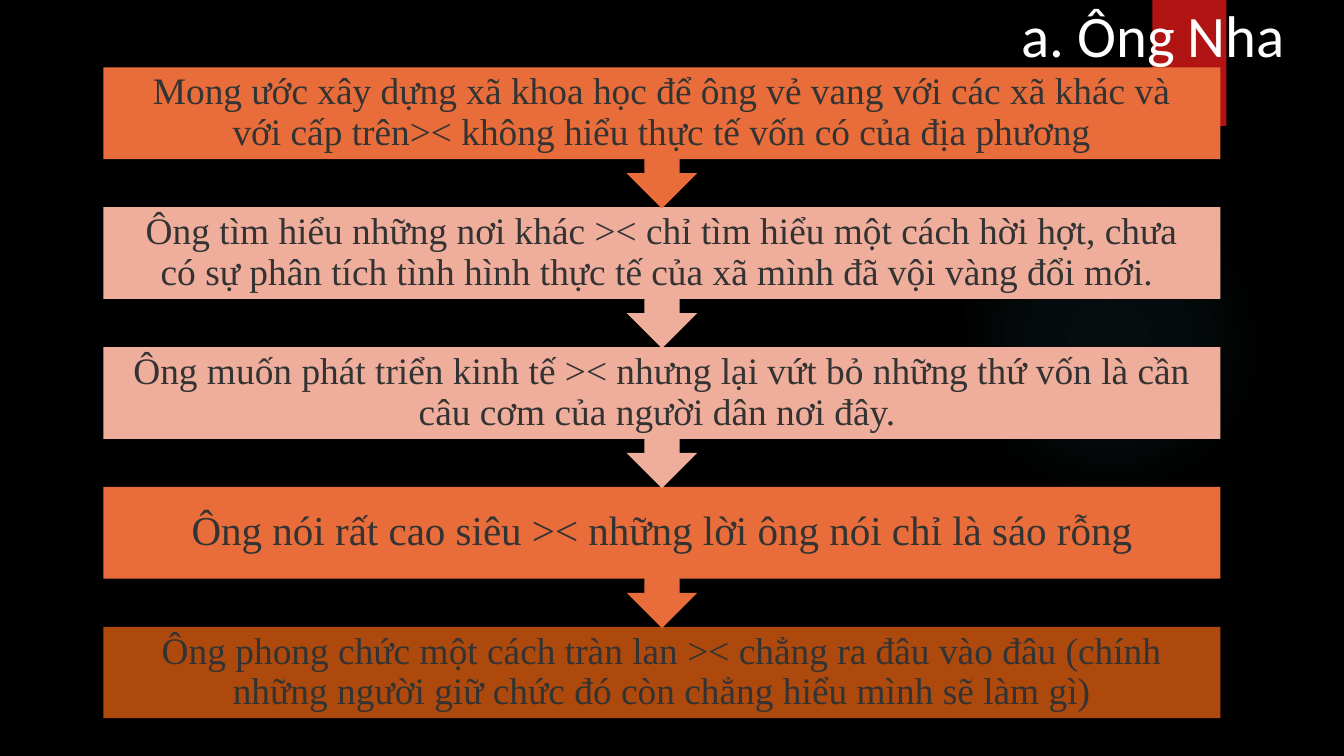
import pptx
import pptx.util
import pptx.dml.color
import pptx.enum.shapes
import pptx.enum.text
import pptx.oxml
import pptx.oxml.ns

WIDE = 10
HIGH = WIDE * 9 / 16
INK = {
    "black": "000000",
    "white": "FFFFFF",
    "text": "333333",
    "red": "B01513",
    "teal": "50B9C1",
    "orange": "E86D3A",
    "pink": "EFAD9B",
    "brown": "AD490D",
}
STEPS = [
    ("Mong ước xây dựng xã khoa học để ông vẻ vang với các xã khác và với cấp trên>< không hiểu thực tế vốn có của địa phương", "orange", 20),
    ("Ông tìm hiểu những nơi khác >< chỉ tìm hiểu một cách hời hợt, chưa có sự phân tích tình hình thực tế của xã mình đã vội vàng đổi mới. ", "pink", 20),
    ("Ông muốn phát triển kinh tế >< nhưng lại vứt bỏ những thứ vốn là cần câu cơm của người dân nơi đây. ", "pink", 20),
    ("Ông nói rất cao siêu >< những lời ông nói chỉ là sáo rỗng", "orange", 22),
    ("Ông phong chức một cách tràn lan >< chẳng ra đâu vào đâu (chính những người giữ chức đó còn chẳng hiểu mình sẽ làm gì)", "brown", 20),
]
KIND = pptx.enum.shapes.MSO_SHAPE
GLOW = [(0, 7), (36, 6), (69, 0)]


def tint(name):
    return pptx.dml.color.RGBColor.from_string(INK[name])


def inch(box):
    return [pptx.util.Inches(n) for n in box]


def block(slide, kind, box, name):
    shape = slide.shapes.add_shape(kind, *inch(box))
    shape.shadow.inherit = False
    shape.fill.solid()
    shape.fill.fore_color.rgb = tint(name)
    shape.line.fill.background()
    return shape


def label(slide, box, text, font, size, name, pad):
    frame = slide.shapes.add_textbox(*inch(box)).text_frame
    frame.word_wrap = True
    frame.margin_left = frame.margin_right = pptx.util.Inches(pad[0])
    frame.margin_top = frame.margin_bottom = pptx.util.Inches(pad[1])
    line = frame.paragraphs[0]
    line.text = text
    line.font.name = font
    line.font.size = pptx.util.Pt(size)
    line.font.color.rgb = tint(name)
    return frame


def glow(slide, box):
    shape = block(slide, KIND.OVAL, box, "teal")
    stops = "".join(
        f'<a:gs pos="{place * 1000}"><a:srgbClr val="{INK["teal"]}">'
        f'<a:alpha val="{share * 1000}"/></a:srgbClr></a:gs>'
        for place, share in GLOW
    )
    grad = pptx.oxml.parse_xml(
        f'<a:gradFill {pptx.oxml.ns.nsdecls("a")}><a:gsLst>{stops}</a:gsLst>'
        '<a:path path="circle"><a:fillToRect l="50000" t="50000" r="50000" b="50000"/>'
        '</a:path></a:gradFill>'
    )
    props = shape.element.spPr
    props.replace(props.find(pptx.oxml.ns.qn("a:solidFill")), grad)


def head(slide, box):
    left, top, width, height = box
    flag = (left + width * 0.43, 0, width * 0.22, HIGH / 6)
    block(slide, KIND.RECTANGLE, flag, "red")
    label(slide, box, "a. Ông Nha", "Calibri", 31.5, "white", (0.1, 0.05))


def flow(slide, box):
    left, top, width, height = box
    bar = 0.68
    step = (height - bar) / (len(STEPS) - 1)
    last = len(STEPS) - 1
    for row in range(last, -1, -1):
        text, name, size = STEPS[row]
        y = top + row * step
        area = (left, y, width, bar)
        if row == last:
            block(slide, KIND.RECTANGLE, area, name)
        else:
            shape = block(slide, KIND.UP_ARROW_CALLOUT, (left, y, width, step + 0.01), name)
            shape.rotation = 180
        pad = size * 0.008
        frame = label(slide, area, text, "Times New Roman", size, "text", (pad, pad))
        frame.vertical_anchor = pptx.enum.text.MSO_ANCHOR.MIDDLE
        line = frame.paragraphs[0]
        line.alignment = pptx.enum.text.PP_ALIGN.CENTER
        line.line_spacing = 0.9


def main():
    deck = pptx.Presentation()
    deck.slide_width, deck.slide_height = inch((WIDE, HIGH))
    slide = deck.slides.add_slide(deck.slide_layouts[6])
    slide.background.fill.solid()
    slide.background.fill.fore_color.rgb = tint("black")
    glow(slide, (WIDE * 0.71, HIGH * 0.25, WIDE * 0.23, WIDE * 0.23))
    head(slide, (WIDE * 0.75, HIGH * -0.01, WIDE * 0.25, HIGH * 0.19))
    flow(slide, (WIDE * 0.077, HIGH * 0.089, WIDE * 0.831, HIGH * 0.861))
    deck.save("out.pptx")


if __name__ == "__main__":
    main()
